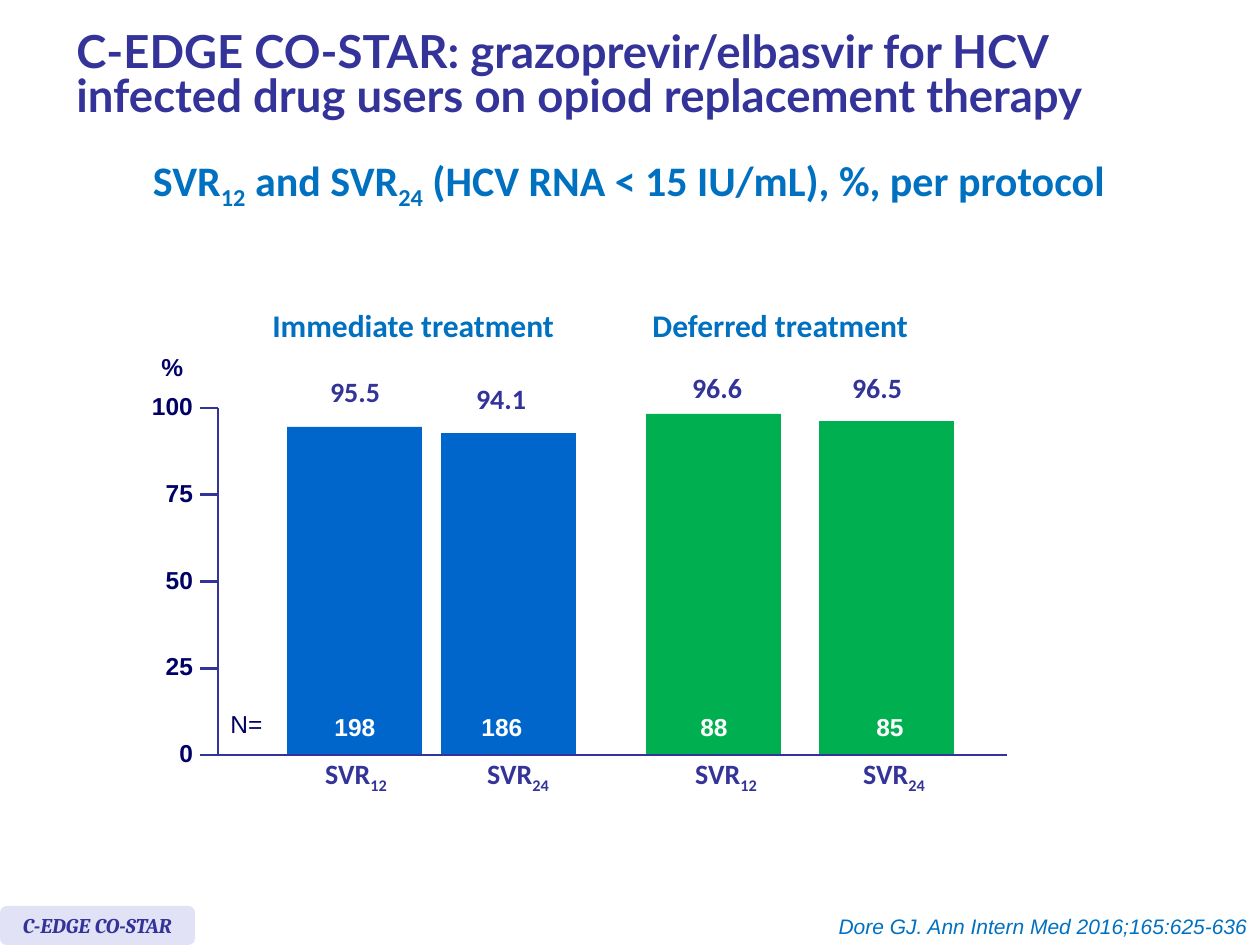
from pptx import Presentation
from pptx.dml.color import RGBColor
from pptx.enum.shapes import MSO_CONNECTOR, MSO_SHAPE
from pptx.enum.text import MSO_ANCHOR, MSO_AUTO_SIZE, PP_ALIGN
from pptx.oxml.ns import qn
from pptx.util import Emu, Pt
from lxml.etree import SubElement

SCALE = 914400 / 126
INDIGO = RGBColor(0x33, 0x33, 0x99)
NAVY = RGBColor(0x00, 0x00, 0x66)
SKY = RGBColor(0x00, 0x70, 0xC0)
BLUE = RGBColor(0x00, 0x66, 0xCC)
GREEN = RGBColor(0x00, 0xB0, 0x50)
LAVENDER = RGBColor(0xE2, 0xE2, 0xF6)
WHITE = RGBColor(0xFF, 0xFF, 0xFF)

LEFT, CENTER, RIGHT = PP_ALIGN.LEFT, PP_ALIGN.CENTER, PP_ALIGN.RIGHT

TITLE = {"name": "Lato", "size": Pt(26), "bold": True, "color": INDIGO}
SUBTITLE = {"name": "Calibri", "size": Pt(24), "bold": True, "color": SKY}
GROUP = SUBTITLE | {"size": Pt(18)}
VALUE = {"name": "Calibri", "size": Pt(16), "bold": True, "color": INDIGO}
AXIS = {"name": "Arial", "size": Pt(14), "bold": True, "color": NAVY}
COUNT = AXIS | {"color": WHITE}
COUNT_KEY = AXIS | {"bold": False}
BADGE = {"name": "Cambria", "size": Pt(12), "bold": True, "italic": True, "color": INDIGO}
CITATION = {"name": "Arial", "size": Pt(12), "italic": True, "color": SKY}


def px(length):
    return Emu(round(length * SCALE))


def write(frame, text, style, align=LEFT, spacing=None):
    """Fill a frame; parts between bars (|) are set as subscripts."""
    para = frame.paragraphs[0]
    para.alignment = align
    if spacing:
        para.line_spacing = Pt(spacing)
    for index, part in enumerate(text.split("|")):
        if not part:
            continue
        span = para.add_run()
        span.text = part
        for key, value in style.items():
            if key == "color":
                span.font.color.rgb = value
            else:
                setattr(span.font, key, value)
        if index % 2:
            span.font._element.set("baseline", "-25000")


def add_text(page, box, text, style, align=LEFT, spacing=None, inset=True, wrap=False):
    shape = page.shapes.add_textbox(*map(px, box))
    frame = shape.text_frame
    frame.word_wrap = wrap
    frame.auto_size = MSO_AUTO_SIZE.NONE if wrap else MSO_AUTO_SIZE.SHAPE_TO_FIT_TEXT
    if not inset:
        for side in ("left", "top", "right", "bottom"):
            setattr(frame, f"margin_{side}", 0)
    write(frame, text, style, align, spacing)
    return shape


def add_label(page, center, top, width, height, text, style, spacing=None):
    box = (center - width / 2, top, width, height)
    add_text(page, box, text, style, CENTER, spacing, inset=False)


def add_block(page, kind, box, color):
    shape = page.shapes.add_shape(kind, *map(px, box))
    shape.shadow.inherit = False
    shape.fill.solid()
    shape.fill.fore_color.rgb = color
    shape.line.fill.background()
    return shape


def add_line(page, *ends):
    line = page.shapes.add_connector(MSO_CONNECTOR.STRAIGHT, *map(px, ends))
    line.line.color.rgb = INDIGO
    line.line.width = Pt(1.5)
    SubElement(line._element.spPr, qn("a:effectLst"))


def add_heading(page, box):
    left, top, width, height = box
    title = add_text(page, (left, top, width, 135),
                     "C-EDGE CO-STAR: grazoprevir/elbasvir for HCV infected drug users "
                     "on opiod replacement therapy", TITLE, spacing=25, wrap=True)
    title.text_frame.vertical_anchor = MSO_ANCHOR.MIDDLE
    add_text(page, (left + 66, top + height - 55, 998, 55),
             "SVR|12| and SVR|24| (HCV RNA < 15 IU/mL), %, per protocol",
             SUBTITLE, CENTER, 23.6)


def add_axes(page, box):
    left, top, width, height = box
    base = top + height
    add_line(page, left, top, left, base)
    add_line(page, left, base, left + width, base)
    for tick in (0, 25, 50, 75, 100):
        y = base - height * tick / 100
        add_line(page, left - 18, y, left, y)
        label_width = 16 * len(str(tick))
        add_text(page, (left - 25 - label_width, y - 17, label_width, 34),
                 str(tick), AXIS, RIGHT, inset=False)
    add_text(page, (left - 69, top - 62, 54, 48), "%", AXIS)
    add_text(page, (left, base - 52, 66, 48), "N=", COUNT_KEY)


def add_bar_plot(page, box):
    left, top, width, height = box
    base = top + height
    # Bar left, bar top, color; value, its center and top; count and its center; name and its center
    bars = [
        (69, 19, BLUE, "95.5", 137, -26, "198", 137, "SVR|12", 138),
        (223, 25, BLUE, "94.1", 283, -19, "186", 284, "SVR|24", 300),
        (428, 6, GREEN, "96.6", 499, -30, "88", 496, "SVR|12", 508),
        (601, 13, GREEN, "96.5", 659, -30, "85", 672, "SVR|24", 676),
    ]
    for x, y, color, *_ in bars:
        add_block(page, MSO_SHAPE.RECTANGLE, (left + x, top + y, 135, height - y), color)
    add_axes(page, box)
    for _, _, _, value, value_x, value_y, count, count_x, name, name_x in bars:
        add_label(page, left + value_x, top + value_y, 58, 32, value, VALUE, 14.8)
        add_label(page, left + count_x, base - 43, 16 * len(count), 34, count, COUNT)
        add_label(page, left + name_x, base + 2, 74, 39, name, VALUE)
    # Group headings
    for x, group_width, text in ((42, 353, "Immediate treatment"), (422, 323, "Deferred treatment")):
        add_text(page, (left + x, top - 108, group_width, 58), text, GROUP)


def add_footer(page, box):
    left, top, width, height = box
    badge = add_block(page, MSO_SHAPE.ROUNDED_RECTANGLE, (left, top, 195, height), LAVENDER)
    badge.text_frame.word_wrap = False
    badge.text_frame.vertical_anchor = MSO_ANCHOR.MIDDLE
    write(badge.text_frame, "C-EDGE CO-STAR", BADGE, CENTER)
    add_text(page, (left + width - 437, top + 1, 437, height - 1),
             "Dore GJ. Ann Intern Med 2016;165:625-636", CITATION, RIGHT)


def main():
    deck = Presentation()
    deck.slide_width, deck.slide_height = px(1260), px(945)
    page = deck.slides.add_slide(deck.slide_layouts[6])
    add_heading(page, (64, 10, 1150, 209))
    add_bar_plot(page, (218, 408, 789, 347))
    add_footer(page, (0, 906, 1260, 39))
    deck.save("out.pptx")


if __name__ == "__main__":
    main()
